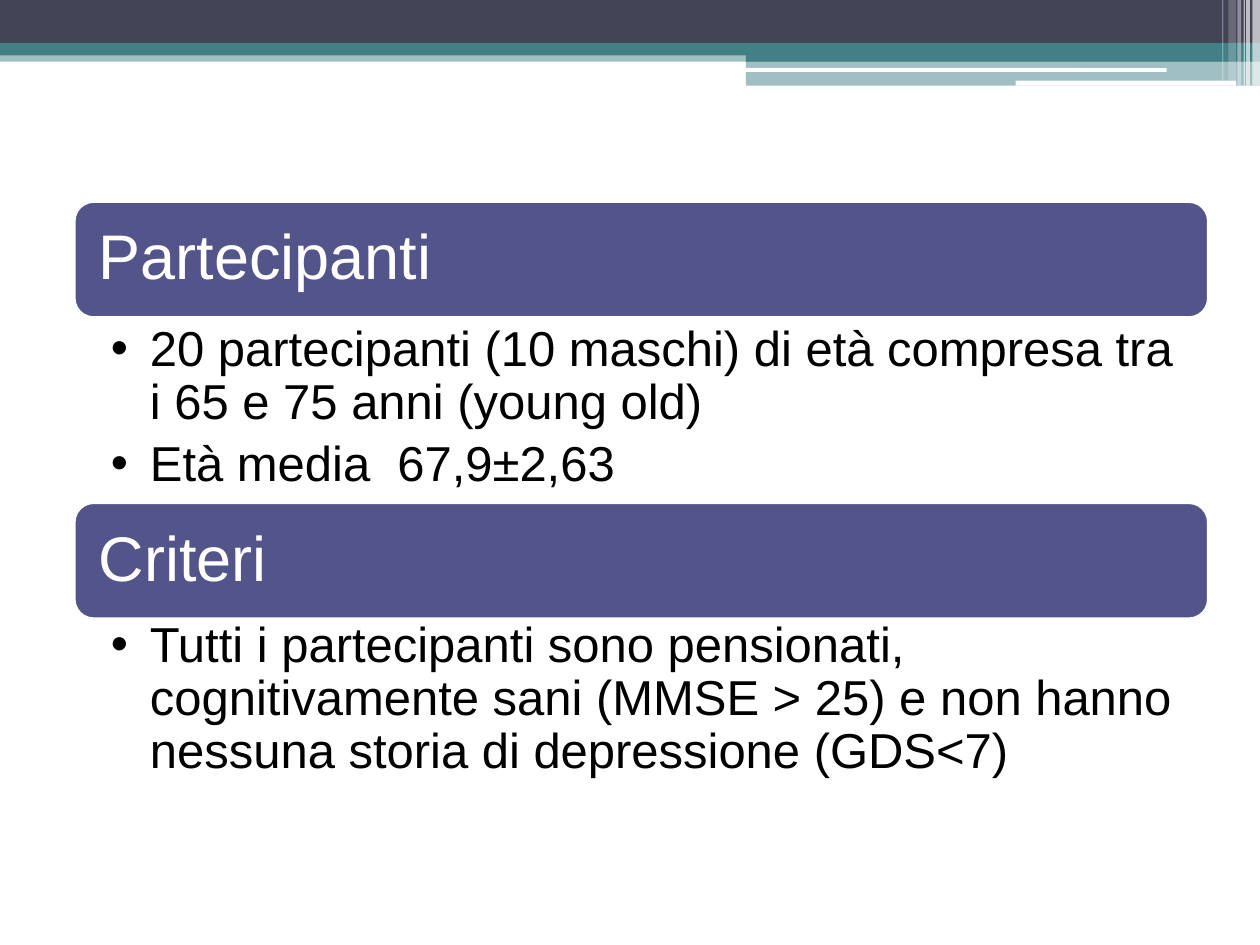
from dataclasses import dataclass

from lxml import etree
from pptx import Presentation
from pptx import util as u
from pptx.dml.color import RGBColor
from pptx.enum import shapes, text
from pptx.oxml.ns import qn

COLS, ROWS = 100, 75
RECT = shapes.MSO_SHAPE.RECTANGLE
ROUND = shapes.MSO_SHAPE.ROUNDED_RECTANGLE


@dataclass(frozen=True)
class Theme:
    font: str = "Arial"
    dark: str = "424456"
    teal: str = "438086"
    violet: str = "53548A"
    white: str = "FFFFFF"
    black: str = "000000"
    heading_size: int = 36
    list_size: int = 28
    line_spacing: float = 0.9
    border: float = 1.5


class Deck:
    """Places elements on a grid of 100 columns by 75 rows."""

    def __init__(self, theme):
        self.theme = theme
        self.prs = Presentation()
        self.prs.slide_width, self.prs.slide_height = u.Inches(10), u.Inches(7.5)
        self.s = self.prs.slides.add_slide(self.prs.slide_layouts[3])
        title = self.s.shapes.title
        title.element.getparent().remove(title.element)
        self.bodies = iter(list(self.s.placeholders))

    def grid(self, x, y, w, h):
        col, row = self.prs.slide_width / COLS, self.prs.slide_height / ROWS
        return int(x * col), int(y * row), int(w * col), int(h * row)

    def block(self, at, color, opacity=100, kind=RECT):
        sp = self.s.shapes.add_shape(kind, *self.grid(*at))
        sp.shadow.inherit = False
        sp.fill.solid()
        sp.fill.fore_color.rgb = RGBColor.from_string(color)
        sp.line.fill.background()
        if opacity < 100:
            clr = sp.fill._xPr.find(".//" + qn("a:srgbClr"))
            etree.SubElement(clr, qn("a:alpha"), val=str(opacity * 1000))
        return sp

    def format(self, p, size, color, after):
        """Style a paragraph; after is a share of the type size."""
        p.alignment = text.PP_ALIGN.LEFT
        p.line_spacing = self.theme.line_spacing
        p.space_before = u.Pt(0)
        p.space_after = u.Pt(size * after)
        for r in p.runs:
            r.font.name, r.font.size = self.theme.font, u.Pt(size)
            r.font.color.rgb = RGBColor.from_string(color)

    def margins(self, tf, left, top, right, bottom):
        tf.margin_left, tf.margin_top = u.Inches(left), u.Inches(top)
        tf.margin_right, tf.margin_bottom = u.Inches(right), u.Inches(bottom)
        tf.word_wrap = True
        tf.auto_size = text.MSO_AUTO_SIZE.NONE

    def heading(self, at, words):
        sp = self.block(at, self.theme.violet, kind=ROUND)
        sp.line.color.rgb = RGBColor.from_string(self.theme.white)
        sp.line.width = u.Pt(self.theme.border)
        tf = sp.text_frame
        self.margins(tf, 0.15, 0.15, 0.15, 0.15)
        tf.vertical_anchor = text.MSO_ANCHOR.MIDDLE
        tf.text = words
        self.format(tf.paragraphs[0], self.theme.heading_size, self.theme.white, 0.35)

    def bullets(self, at, items):
        sp = next(self.bodies)
        sp.left, sp.top, sp.width, sp.height = self.grid(*at)
        tf = sp.text_frame
        self.margins(tf, 0.29, 0.05, 0.28, 0.05)
        tf.vertical_anchor = text.MSO_ANCHOR.TOP
        tf.text = "\n".join(items)
        for p in tf.paragraphs:
            p.level = 1
            self.format(p, self.theme.list_size, self.theme.black, 0.2)
            pPr = p._p.get_or_add_pPr()
            pPr.set("marL", str(u.Inches(0.31)))
            pPr.set("indent", str(-u.Inches(0.31)))
            etree.SubElement(pPr, qn("a:buFont"), typeface=self.theme.font)
            etree.SubElement(pPr, qn("a:buChar"), char="•")


def draw_banner(deck):
    t = deck.theme
    for at, color, opacity in [
        ((0, 4, 100, 0.9), t.teal, 50),
        ((0, 0, 100, 3.4), t.dark, 100),
        ((0, 3.4, 100, 1), t.teal, 100),
        ((59.2, 3.9, 40.8, 1), t.teal, 100),
        ((59.2, 4.8, 40.8, 2), t.teal, 50),
    ]:
        deck.block(at, color, opacity)
    for at in [(59.1, 5.4, 33.5, 0.3), (80.6, 6.4, 17.5, 0.4)]:
        deck.block(at, t.white, kind=ROUND)
    for x, w, h, opacity in [
        (99.4, 0.6, 6.8, 65),
        (98.9, 0.3, 6.8, 65),
        (98.7, 0.1, 6.8, 60),
        (98.2, 0.3, 6.8, 40),
        (97.5, 0.6, 6.4, 20),
        (97, 0.1, 6.4, 30),
    ]:
        deck.block((x, 0, w, h), t.white, opacity)


def main():
    deck = Deck(Theme())
    draw_banner(deck)
    left, width = 5.9, 90
    for words, top, list_top, list_height, items in [
        ("Partecipanti", 16, 25.2, 14.3, [
            "20 partecipanti (10 maschi) di età compresa tra i 65 e 75 anni (young old)",
            "Età media  67,9±2,63",
        ]),
        ("Criteri", 39.9, 48.7, 13.4, [
            "Tutti i partecipanti sono pensionati, cognitivamente sani (MMSE > 25) "
            "e non hanno nessuna storia di depressione (GDS<7)",
        ]),
    ]:
        deck.heading((left, top, width, 9.2), words)
        deck.bullets((left, list_top, width, list_height), items)
    deck.prs.save("out.pptx")


if __name__ == "__main__":
    main()
